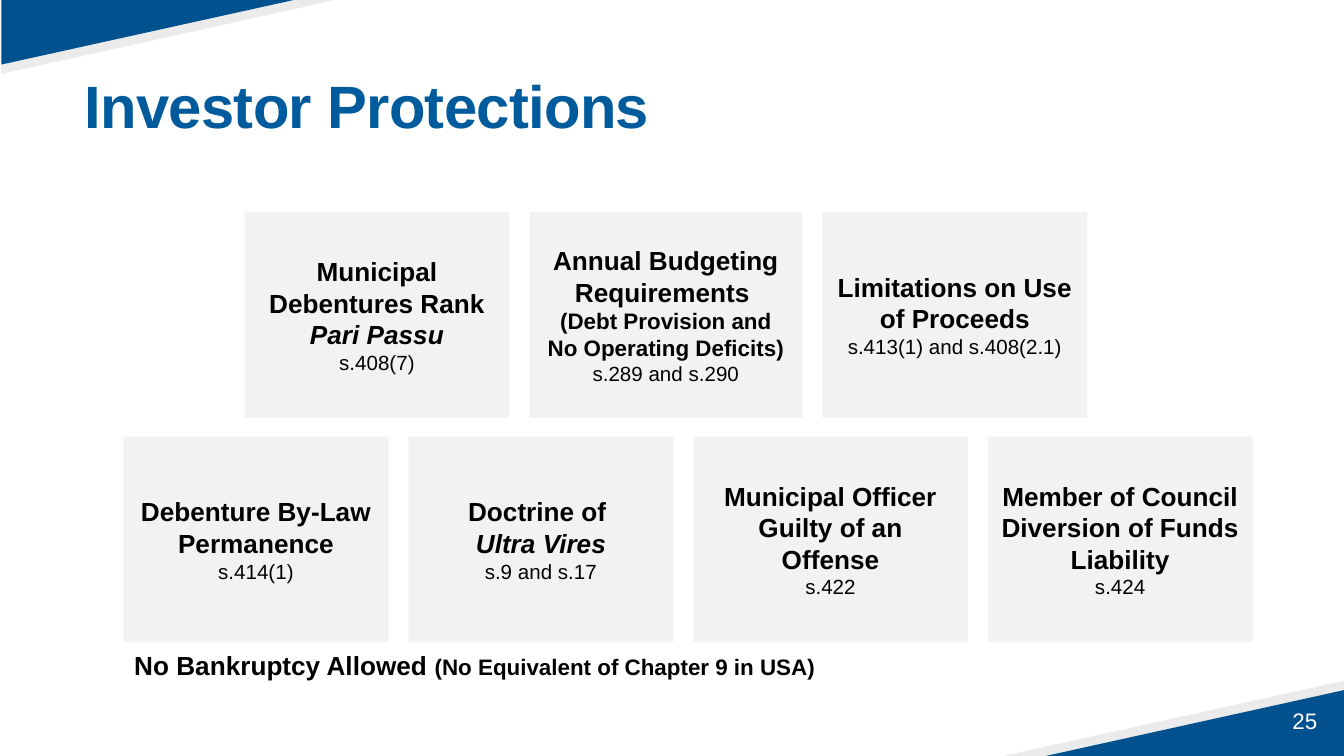
from pptx import Presentation
from pptx.dml.color import RGBColor
from pptx.enum.shapes import MSO_SHAPE
from pptx.enum.text import MSO_ANCHOR, MSO_AUTO_SIZE, PP_ALIGN
from pptx.util import Inches, Pt

NAVY = RGBColor(0x00, 0x51, 0x8E)
BLUE = RGBColor(0x00, 0x5B, 0x9C)
SILVER = RGBColor(0xEB, 0xEB, 0xEC)
CARD = RGBColor(0xF2, 0xF2, 0xF2)
BLACK = RGBColor(0, 0, 0)
WHITE = RGBColor(0xFF, 0xFF, 0xFF)

WIDTH = 10
HEIGHT = WIDTH * 9 / 16
CARD_W, CARD_H, GAP = 1.97, 1.53, 0.15

prs = Presentation()
prs.slide_width, prs.slide_height = Inches(WIDTH), Inches(HEIGHT)
s = prs.slides.add_slide(prs.slide_layouts[5])


def set_font(font, size, color=BLACK, bold=False):
    font.name = "Arial"
    font.size = Pt(size)
    font.bold = bold
    font.color.rgb = color


def add_text(left, top, width, height):
    tf = s.shapes.add_textbox(Inches(left), Inches(top), Inches(width), Inches(height)).text_frame
    tf.word_wrap = True
    return tf


# Corner wedges: silver under navy, top left and bottom right
for x, y, direction in [(0.01, -0.01, 1), (WIDTH, HEIGHT, -1)]:
    for width, height, color in [(2.53, 0.56, SILVER), (2.22, 0.49, NAVY)]:
        fb = s.shapes.build_freeform(Inches(x), Inches(y))
        fb.add_line_segments([(Inches(x + direction * width), Inches(y)),
                              (Inches(x), Inches(y + direction * height))])
        sp = fb.convert_to_shape()
        sp.shadow.inherit = False
        sp.fill.solid()
        sp.fill.fore_color.rgb = color
        sp.line.fill.background()

# Page number
tf = add_text(7.57, 5.21, 2.33, 0.3)
tf.vertical_anchor = MSO_ANCHOR.MIDDLE
p = tf.paragraphs[0]
p.text = "25"
p.alignment = PP_ALIGN.RIGHT
set_font(p.font, 12, WHITE)

# Title
title = s.shapes.title
title.left, title.top, title.width, title.height = [Inches(v) for v in (0.53, 0.52, 8.62, 0.68)]
tf = title.text_frame
tf.auto_size = MSO_AUTO_SIZE.NONE
tf.vertical_anchor = MSO_ANCHOR.TOP
p = tf.paragraphs[0]
p.alignment = PP_ALIGN.LEFT
p.line_spacing = 0.9
r = p.add_run()
r.text = "Investor Protections"
set_font(r.font, 32, BLUE, True)
r.font._element.set("spc", "-40")

# Cards: (width, heading lines, section); a line is (size, [(text, italic)])
rows = [
    (1.82, 1.58, [
        (CARD_W, [(14, [("Municipal Debentures Rank ", False), ("Pari Passu", True)])], "s.408(7)"),
        (2.03, [(14, [("Annual Budgeting Requirements ", False)]),
                (12, [("(Debt Provision and No Operating Deficits)", False)])], "s.289 and s.290"),
        (CARD_W, [(14, [("Limitations on Use of Proceeds", False)])], "s.413(1) and s.408(2.1)"),
    ]),
    (0.92, 3.25, [
        (CARD_W, [(14, [("Debenture By-Law Permanence", False)])], "s.414(1)"),
        (CARD_W, [(14, [("Doctrine of ", False)]), (14, [("Ultra Vires", True)])], "s.9 and s.17"),
        (2.04, [(14, [("Municipal Officer Guilty of an Offense", False)])], "s.422"),
        (CARD_W, [(14, [("Member of Council Diversion of Funds Liability", False)])], "s.424"),
    ]),
]
for left, top, cards in rows:
    for width, heading, section in cards:
        sp = s.shapes.add_shape(MSO_SHAPE.RECTANGLE, Inches(left), Inches(top),
                                Inches(width), Inches(CARD_H))
        sp.shadow.inherit = False
        sp.fill.solid()
        sp.fill.fore_color.rgb = CARD
        sp.line.fill.background()
        tf = sp.text_frame
        tf.word_wrap = True
        tf.vertical_anchor = MSO_ANCHOR.MIDDLE
        for i, (size, runs) in enumerate(heading + [(11, [(section, False)])]):
            p = tf.paragraphs[0] if i == 0 else tf.add_paragraph()
            p.alignment = PP_ALIGN.CENTER
            set_font(p.font, size, bold=i < len(heading))
            for text, italic in runs:
                r = p.add_run()
                r.text = text
                if italic:
                    r.font.italic = True
        left += width + GAP

# Closing note
tf = add_text(0.9, 4.78, 6.98, 0.34)
p = tf.paragraphs[0]
for text, size in [("No Bankruptcy Allowed ", 14), ("(No Equivalent of Chapter 9 in USA)", 12)]:
    r = p.add_run()
    r.text = text
    set_font(r.font, size, bold=True)

prs.save("out.pptx")
